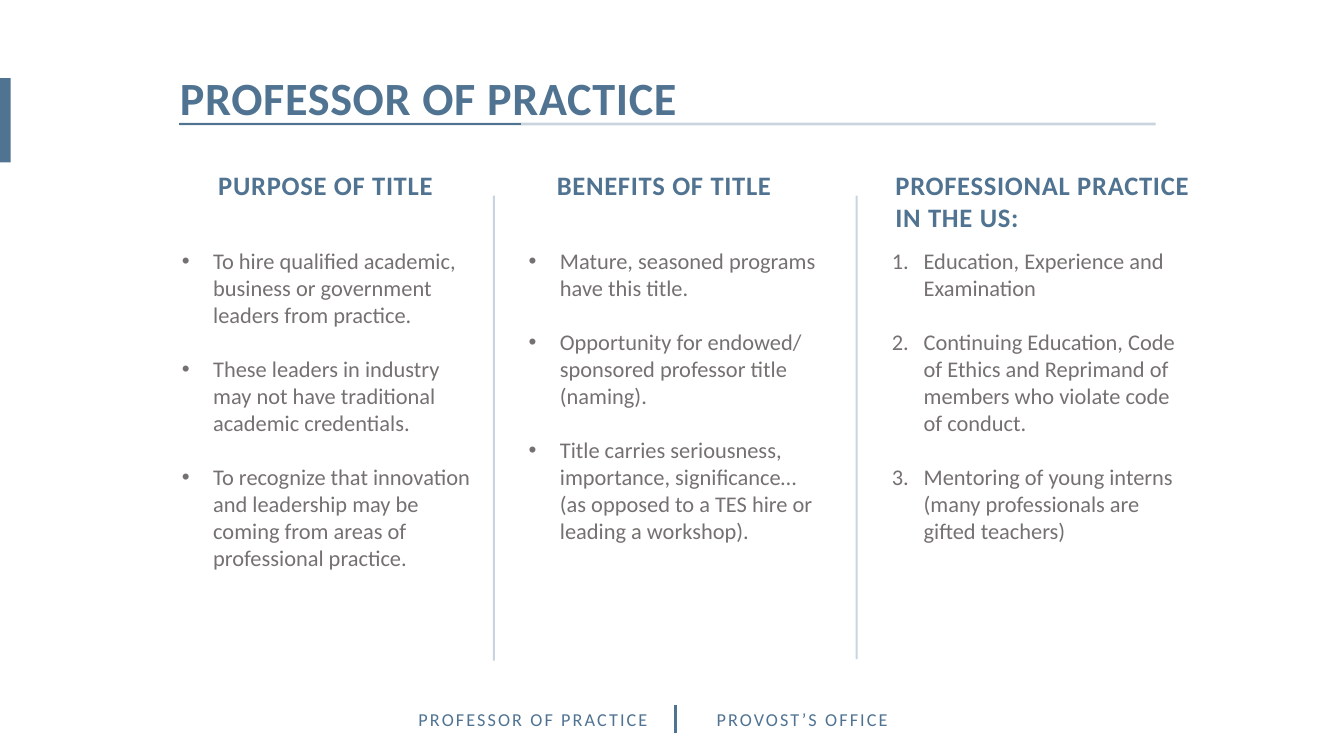
from lxml.etree import SubElement
from pptx import Presentation
from pptx.dml.color import RGBColor
from pptx.enum.shapes import MSO_CONNECTOR as Connector, MSO_SHAPE as Shape
from pptx.enum.text import MSO_ANCHOR as Anchor, MSO_AUTO_SIZE as AutoSize, PP_ALIGN as Align
from pptx.oxml.ns import qn
from pptx.util import Pt

PX = 9144
FONT = "Calibri"
BLUE = "507392"
GRAY = "767171"
COLUMNS = [
    {
        "heading": ["PURPOSE OF TITLE"],
        "heading_box": (423, 330, 596, 74),
        "list_box": (351, 486, 596, 656),
        "numbered": False,
        "items": [
            "To hire qualified academic, business or government leaders from practice.",
            "These leaders in industry may not have traditional academic credentials.",
            "To recognize that innovation and leadership may be coming from areas of professional practice.",
        ],
    },
    {
        "heading": ["BENEFITS OF TITLE"],
        "heading_box": (1095, 330, 596, 74),
        "list_box": (1039, 486, 594, 602),
        "numbered": False,
        "items": [
            "Mature, seasoned programs have this title.",
            "Opportunity for endowed/ sponsored professor title (naming).",
            "Title carries seriousness, importance, significance… (as opposed to a TES hire or leading a workshop).",
        ],
    },
    {
        "heading": ["PROFESSIONAL PRACTICE", "IN THE US:"],
        "heading_box": (1767, 330, 739, 138),
        "list_box": (1741, 486, 601, 602),
        "numbered": True,
        "items": [
            "Education, Experience and Examination",
            "Continuing Education, Code of Ethics and Reprimand of members who violate code of conduct.",
            "Mentoring of young interns (many professionals are gifted teachers)",
        ],
    },
]


def px(length):
    return length * PX


def color(value):
    return RGBColor.from_string(value)


def prepare(page, box, holder=None):
    left, top, width, height = map(px, box)
    if holder is None:
        holder = page.shapes.add_textbox(left, top, width, height)
    holder.left, holder.top, holder.width, holder.height = left, top, width, height
    frame = holder.text_frame
    frame.word_wrap = True
    frame.auto_size = AutoSize.NONE
    frame.vertical_anchor = Anchor.TOP
    return frame


def add_span(para, text, size, fill, bold=False, spacing=0):
    span = para.add_run()
    span.text = text
    span.font.name = FONT
    span.font.size = Pt(size)
    span.font.bold = bold
    span.font.color.rgb = color(fill)
    span._r.get_or_add_rPr().set("spc", str(spacing * 100))


def add_label(page, box, lines, size, bold, spacing, align=Align.LEFT, holder=None):
    para = prepare(page, box, holder).paragraphs[0]
    para.alignment = align
    para.space_before = Pt(0)
    para.line_spacing = 1.0
    for index, line in enumerate(lines):
        if index:
            para.add_line_break()
        add_span(para, line, size, BLUE, bold, spacing)


def set_bullet(para, numbered):
    margin, indent = (82, -63) if numbered else (62, -62)
    props = para._p.get_or_add_pPr()
    props.set("marL", str(px(margin)))
    props.set("indent", str(px(indent)))
    if numbered:
        SubElement(props, qn("a:buFont"), typeface="+mj-lt")
        SubElement(props, qn("a:buAutoNum"), type="arabicPeriod")
    else:
        SubElement(props, qn("a:buFont"), typeface="Arial")
        SubElement(props, qn("a:buChar"), char="•")


def add_list(page, box, items, numbered, holder=None):
    frame = prepare(page, box, holder)
    for index, item in enumerate(items):
        para = frame.add_paragraph() if index else frame.paragraphs[0]
        para.alignment = Align.LEFT
        para.line_spacing = 1.0
        para.space_before = Pt(39 if index else 0)
        set_bullet(para, numbered)
        add_span(para, item, 32, GRAY)


def add_rule(page, start, end, width, opacity=100):
    rule = page.shapes.add_connector(Connector.STRAIGHT, *map(px, start + end))
    rule.line.width = Pt(width)
    rule.line.color.rgb = color(BLUE)
    if opacity < 100:
        tint = rule.line._ln.find(".//" + qn("a:srgbClr"))
        SubElement(tint, qn("a:alpha"), val=str(opacity * 1000))
    SubElement(rule._element.spPr, qn("a:effectLst"))


def add_header(page, box):
    left, top, width, height = box
    add_rule(page, (left + 9, top + 114), (left + 1946, top + 114), 4, 30)
    add_rule(page, (left + 9, top + 114), (left + 687, top + 114), 4)
    add_label(page, box, ["PROFESSOR OF PRACTICE"], 66, True, 1, holder=page.shapes.title)
    tab = page.shapes.add_shape(Shape.RECTANGLE, 0, px(top + 23), px(21), px(167))
    tab.shadow.inherit = False
    tab.fill.solid()
    tab.fill.fore_color.rgb = color(BLUE)
    tab.line.fill.background()


def add_column(page, column, heading_holder=None, list_holder=None):
    add_label(page, column["heading_box"], column["heading"], 38, True, 1, holder=heading_holder)
    add_list(page, column["list_box"], column["items"], column["numbered"], list_holder)


def add_footer(page, box):
    left, top, width, height = box
    half = width // 2
    for index, text in enumerate(["PROFESSOR OF PRACTICE", "PROVOST’S OFFICE"]):
        add_label(page, (left + index * half, top, half, height), [text], 26, False, 3, Align.CENTER)
    add_rule(page, (left + half + 15, top - 2), (left + half + 15, top + height), 4)


def main():
    deck = Presentation()
    deck.slide_width, deck.slide_height = px(2667), px(1500)
    page = deck.slides.add_slide(deck.slide_layouts.get_by_name("Comparison"))
    holders = [holder for holder in page.placeholders if holder != page.shapes.title]
    pairs = [holders[:2], holders[2:], []]
    add_header(page, (347, 132, 1344, 121))
    for column, pair in zip(COLUMNS, pairs):
        add_column(page, column, *pair)
    for left, bottom in [(980, 1311), (1700, 1308)]:
        add_rule(page, (left, 388), (left, bottom), 3, 30)
    add_footer(page, (791, 1401, 1068, 54))
    deck.save("out.pptx")


if __name__ == "__main__":
    main()
